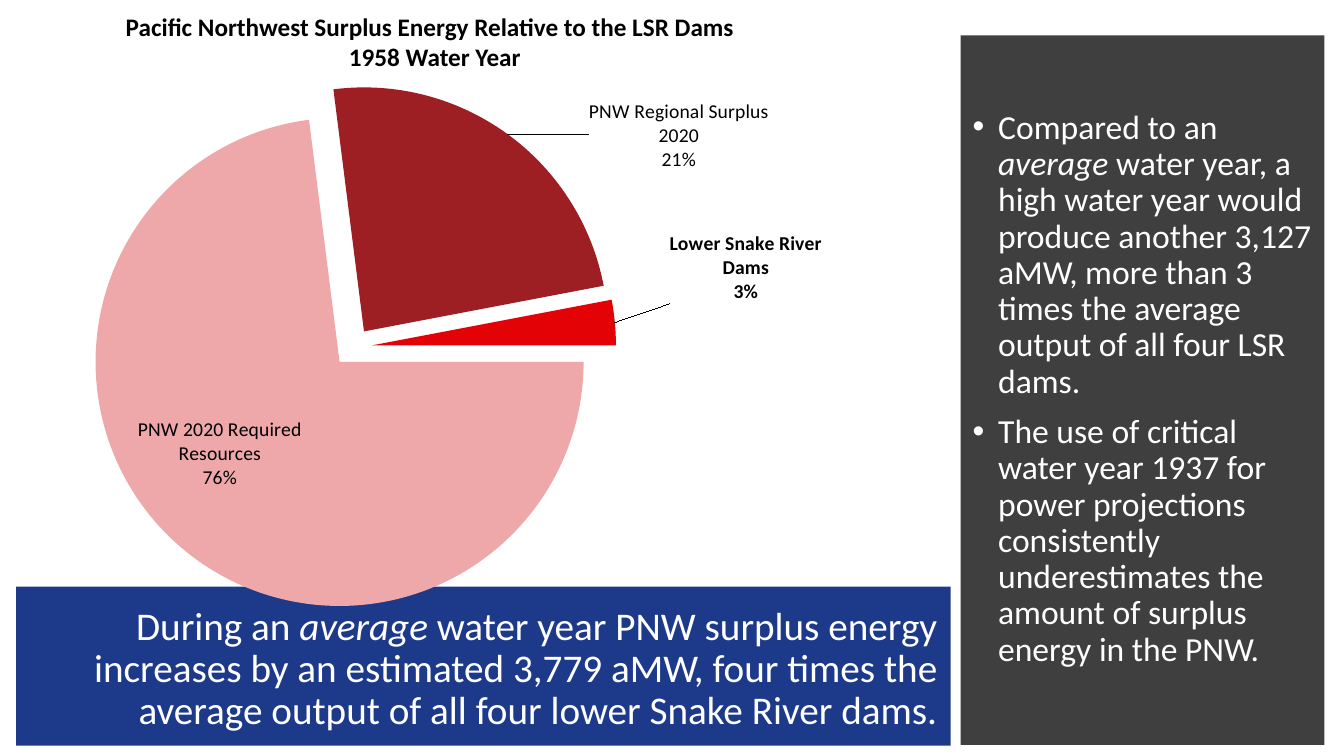
"""Build the slide on surplus energy in the Pacific Northwest."""
import lxml.etree
import pptx
import pptx.chart.data
import pptx.dml.color
import pptx.enum.chart
import pptx.enum.shapes
import pptx.enum.text
import pptx.oxml.ns
import pptx.util

Cm, Pt = pptx.util.Cm, pptx.util.Pt
ALIGN = pptx.enum.text.PP_ALIGN
ANCHOR = pptx.enum.text.MSO_ANCHOR
LABEL = pptx.enum.chart.XL_LABEL_POSITION
FONT = "Calibri"
COLOURS = {"white": "FFFFFF", "black": "000000", "panel": "3F3F3F", "banner": "1D3989",
           "heading": "7A7A7A", "required": "EEA8AA", "surplus": "9D1E23", "dams": "E30205"}


def colour(name):
    return pptx.dml.color.RGBColor.from_string(COLOURS[name])


def style_font(font, size, name, bold=False, italic=False):
    font.name, font.size, font.bold, font.italic = FONT, Pt(size), bold, italic
    font.color.rgb = colour(name)


def place(shape, left, top, width, height):
    shape.left, shape.top, shape.width, shape.height = map(Cm, (left, top, width, height))


def add_panel(page, area, name):
    panel = page.shapes.add_shape(pptx.enum.shapes.MSO_SHAPE.RECTANGLE, *map(Cm, area))
    panel.shadow.inherit = False
    panel.fill.solid()
    panel.fill.fore_color.rgb = colour(name)
    panel.line.fill.background()
    page.shapes.title.element.addprevious(panel.element)


def write(para, text, size=24, name="white", bold=False, align=ALIGN.LEFT, spacing=1.0,
          before=0, hanging=None):
    """Write text into a paragraph, with the parts between asterisks in italics."""
    para.alignment, para.line_spacing, para.space_before = align, spacing, Pt(before)
    for index, part in enumerate(text.split("*")):
        span = para.add_run()
        span.text = part
        style_font(span.font, size, name, bold, italic=index % 2 == 1)
    if hanging:
        properties = para._p.get_or_add_pPr()
        properties.set("marL", str(Cm(hanging)))
        properties.set("indent", str(-Cm(hanging)))


def prepare(box, area, anchor):
    place(box, *area)
    frame = box.text_frame
    frame.word_wrap, frame.vertical_anchor = True, anchor
    frame.auto_size = pptx.enum.text.MSO_AUTO_SIZE.NONE
    return frame


def chart_node(tag, children=(), **attributes):
    node = lxml.etree.Element(pptx.oxml.ns.qn("c:" + tag), attributes)
    node.extend(children)
    return node


def manual_layout(**values):
    parts = [chart_node(tag, val=str(value)) for tag, value in values.items()]
    return chart_node("layout", [chart_node("manualLayout", parts)])


def label_slice(point, text, position, shift, bold):
    """Label a slice; without text it shows its category and percentage."""
    label = point.data_label
    if text:
        for index, line in enumerate(text.split("\n")):
            frame = label.text_frame
            para = frame.add_paragraph() if index else frame.paragraphs[0]
            write(para, line, size=14, name="black", bold=bold, align=ALIGN.CENTER)
    else:
        style_font(label.font, 14, "black", bold)
    label.position = position
    node = point.data_label._dLbl
    node.find(pptx.oxml.ns.qn("c:idx")).addnext(manual_layout(x=shift[0], y=shift[1]))
    for tag, shown in (("showVal", "0"), ("showCatName", "1"), ("showPercent", "1")):
        node.find(pptx.oxml.ns.qn("c:" + tag)).set("val", shown)
    separator = chart_node("separator")
    separator.text = "\n"
    node.append(separator)


def add_pie(page, area):
    data = pptx.chart.data.CategoryChartData()
    data.categories = ["Pacific Northwest Surplus Energy Relative to the LSR Dams 1958 Water Year",
                       "PNW 2020 Required Resources", "PNW Regional Surplus 2020",
                       "Lower Snake River Dams"]
    data.add_series("Series 1", (None, 73, 24, 3))
    chart = page.shapes.add_chart(pptx.enum.chart.XL_CHART_TYPE.PIE, *map(Cm, area), data).chart
    chart.has_legend = chart.has_title = False
    style_font(chart.font, 10, "black")
    plot = chart.plots[0]
    plot.vary_by_categories = True
    series = plot.series[0]
    for index, name in enumerate(("heading", "required", "surplus", "dams")):
        fill = series.points[index].format.fill
        fill.solid()
        fill.fore_color.rgb = colour(name)
    series._element.find(pptx.oxml.ns.qn("c:dPt")).addprevious(chart_node("explosion", val="8"))
    series._element.addnext(chart_node("firstSliceAng", val="90"))
    for extra in plot._element.findall(pptx.oxml.ns.qn("c:firstSliceAng"))[1:]:
        plot._element.remove(extra)
    series.data_labels.show_value = False
    label_slice(series.points[1], "PNW 2020 Required Resources\n76%", LABEL.CENTER,
                (-0.04, 0), False)
    label_slice(series.points[2], "PNW Regional Surplus 2020\n21%", LABEL.OUTSIDE_END,
                (0.08, 0.07), False)
    label_slice(series.points[3], None, LABEL.OUTSIDE_END, (0.05, -0.03), True)
    plot_area = plot._element.getparent()
    for old in plot_area.findall(pptx.oxml.ns.qn("c:layout")):
        plot_area.remove(old)
    layout = manual_layout(layoutTarget="inner", xMode="edge", yMode="edge",
                           x=0.15, y=0.11, w=0.54, h=0.87)
    plot_area.insert(0, layout)


def main():
    deck = pptx.Presentation()
    deck.slide_width, deck.slide_height = Cm(33.87), Cm(19.05)
    page = deck.slides.add_slide(deck.slide_layouts[1])
    add_panel(page, (24.21, 0.89, 9.17, 17.88), "panel")
    add_panel(page, (0.41, 14.78, 23.55, 4.01), "banner")

    frame = prepare(page.shapes.title, (0.43, 15.37, 23.44, 3.02), ANCHOR.MIDDLE)
    write(frame.paragraphs[0], "During an *average* water year PNW surplus energy increases by an "
          "estimated 3,779 aMW, four times the average output of all four lower Snake River dams.",
          size=28, align=ALIGN.RIGHT, spacing=0.9)

    frame = prepare(page.placeholders[1], (24.26, 0.97, 9.14, 17.68), ANCHOR.MIDDLE)
    points = ("Compared to an *average* water year, a high water year would produce another "
              "3,127 aMW, more than 3 times the average output of all four LSR dams.",
              "The use of critical water year 1937 for power projections consistently "
              "underestimates the amount of surplus energy in the PNW.")
    for index, text in enumerate(points):
        para = frame.add_paragraph() if index else frame.paragraphs[0]
        write(para, text, spacing=0.9, before=10, hanging=0.64)

    add_pie(page, (-1.45, 0.43, 24.61, 15.27))
    heading = page.shapes.add_textbox(0, 0, 0, 0)
    frame = prepare(heading, (2.92, 0.15, 16.08, 1.8), ANCHOR.TOP)
    write(frame.paragraphs[0], "Pacific Northwest Surplus Energy Relative to the LSR Dams",
          size=18, name="black", bold=True)
    write(frame.add_paragraph(), "1958 Water Year", size=18, name="black", bold=True,
          align=ALIGN.CENTER)
    deck.save("out.pptx")


if __name__ == "__main__":
    main()
